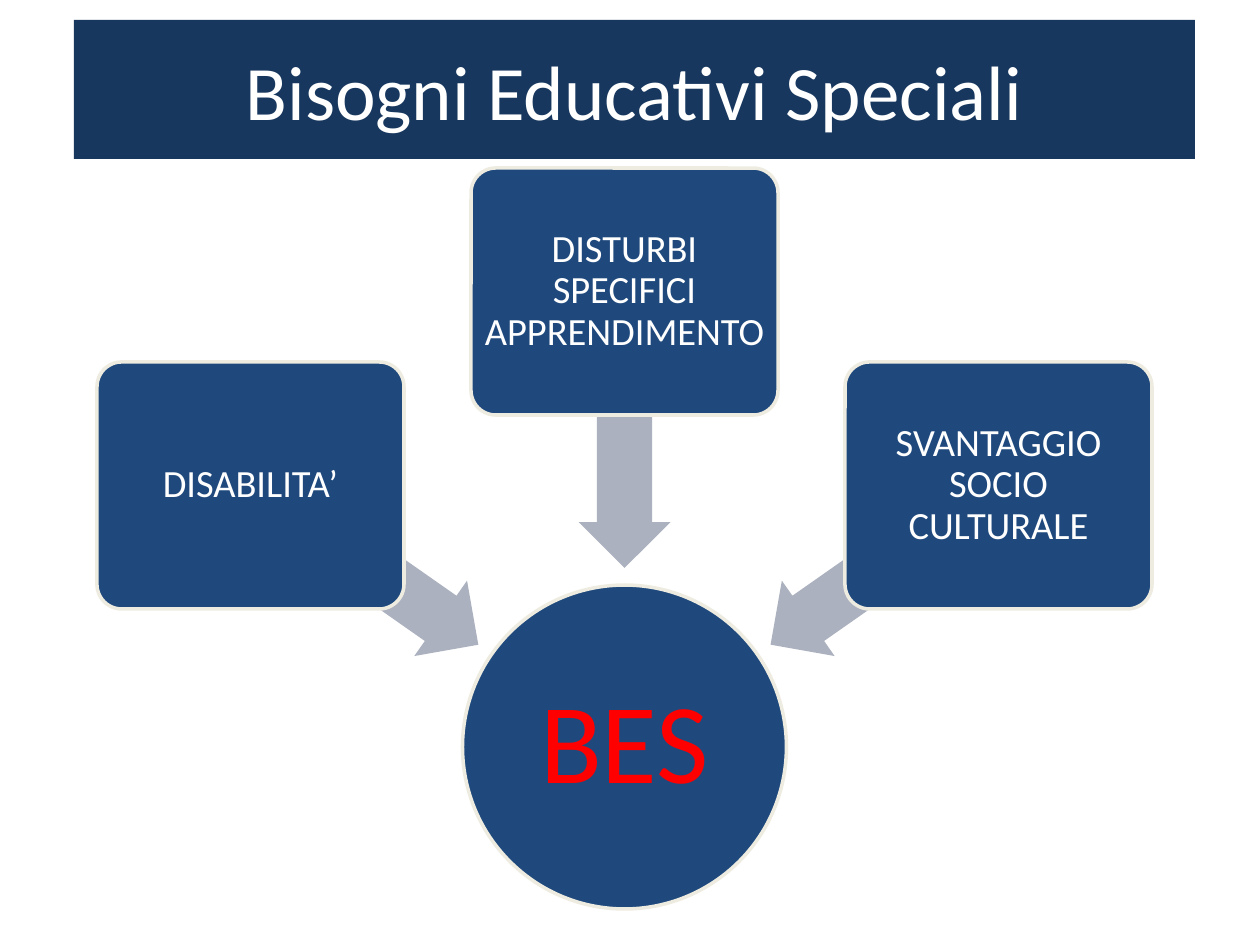
import pptx
import pptx.util
import pptx.dml.color
import pptx.enum.shapes
import pptx.enum.text

SHAPE = pptx.enum.shapes.MSO_SHAPE
PX = 914400 / 126  # EMU in one px


class Theme:
    font = "Calibri"
    banner, node, edge, arrow = "17375E", "1F497D", "EEECE1", "ACB1BF"
    light, accent = "FFFFFF", "FF0000"
    title_size, hub_size, cause_size = 44, 65, 22
    edge_width = 2


def px(n):
    return pptx.util.Emu(round(n * PX))


def rgb(color):
    return pptx.dml.color.RGBColor.from_string(color)


def add_block(parent, kind, box, fill, edge=None):
    sp = parent.add_shape(kind, *map(px, box))
    sp.shadow.inherit = False
    sp.fill.solid()
    sp.fill.fore_color.rgb = rgb(fill)
    if edge:
        sp.line.color.rgb = rgb(edge)
        sp.line.width = pptx.util.Pt(Theme.edge_width)
    else:
        sp.line.fill.background()
    return sp


def write(sp, text, size, color, spacing=1.0):
    tf = sp.text_frame
    frame_format = {
        "word_wrap": True,
        "vertical_anchor": pptx.enum.text.MSO_ANCHOR.MIDDLE,
        "margin_left": px(6), "margin_right": px(6),
        "margin_top": px(6), "margin_bottom": px(6),
    }
    for name, value in frame_format.items():
        setattr(tf, name, value)
    p = tf.paragraphs[0]
    p.alignment = pptx.enum.text.PP_ALIGN.CENTER
    p.line_spacing = spacing
    r = p.add_run()
    r.text = text
    font_format = {"name": Theme.font, "size": pptx.util.Pt(size)}
    for name, value in font_format.items():
        setattr(r.font, name, value)
    r.font.color.rgb = rgb(color)


def add_banner(s, box, text):
    sp = add_block(s.shapes, SHAPE.RECTANGLE, box, Theme.banner)
    write(sp, text, Theme.title_size, Theme.light)


def add_converging_diagram(s, box, hub_text, causes):
    left, top, width, height = box
    group = s.shapes.add_group_shape().shapes
    center = left + width / 2

    # Hub circle at the bottom centre
    hub = 324
    sp = add_block(group, SHAPE.OVAL,
                   (center - hub / 2, top + height - hub, hub, hub),
                   Theme.node, Theme.edge)
    write(sp, hub_text, Theme.hub_size, Theme.accent, 0.9)

    # Causes, each with an arrow towards the hub
    cause_w, cause_h, arrow_w, arrow_h = 307, 247, 278, 92
    step = (width - cause_w) / 2
    for side, text in zip((-1, 0, 1), causes):
        drop = abs(side)
        arrow_x = center + side * 260
        arrow_y = top + 261 + drop * 136
        arrow = add_block(group, SHAPE.LEFT_ARROW,
                          (arrow_x - arrow_w / 2, arrow_y - arrow_h / 2,
                           arrow_w, arrow_h), Theme.arrow)
        arrow.adjustments[0] = 0.6
        arrow.adjustments[1] = 0.5
        arrow.rotation = 270 + side * 55

        sp = add_block(group, SHAPE.ROUNDED_RECTANGLE,
                       (center + side * step - cause_w / 2, top + drop * 194,
                        cause_w, cause_h), Theme.node, Theme.edge)
        sp.adjustments[0] = 0.1
        write(sp, text, Theme.cause_size, Theme.light, 0.9)


def main():
    prs = pptx.Presentation()
    prs.slide_width, prs.slide_height = px(1260), px(945)
    s = prs.slides.add_slide(prs.slide_layouts[6])
    add_banner(s, (74, 20, 1121, 139), "Bisogni Educativi Speciali")
    add_converging_diagram(s, (97, 168, 1055, 741), "BES", (
        "DISABILITA’",
        "DISTURBI SPECIFICI APPRENDIMENTO",
        "SVANTAGGIO SOCIO CULTURALE",
    ))
    prs.save("out.pptx")


if __name__ == "__main__":
    main()
